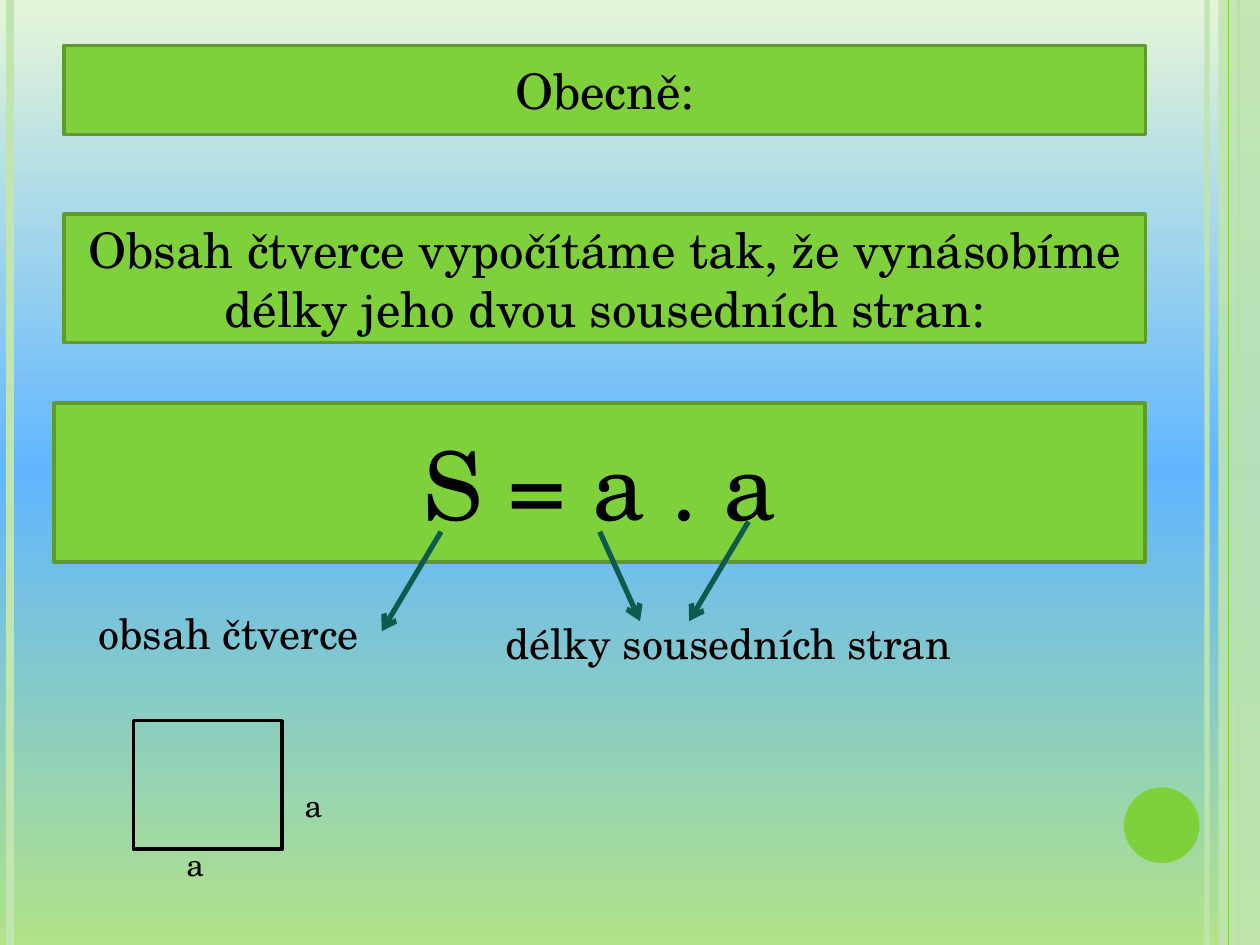
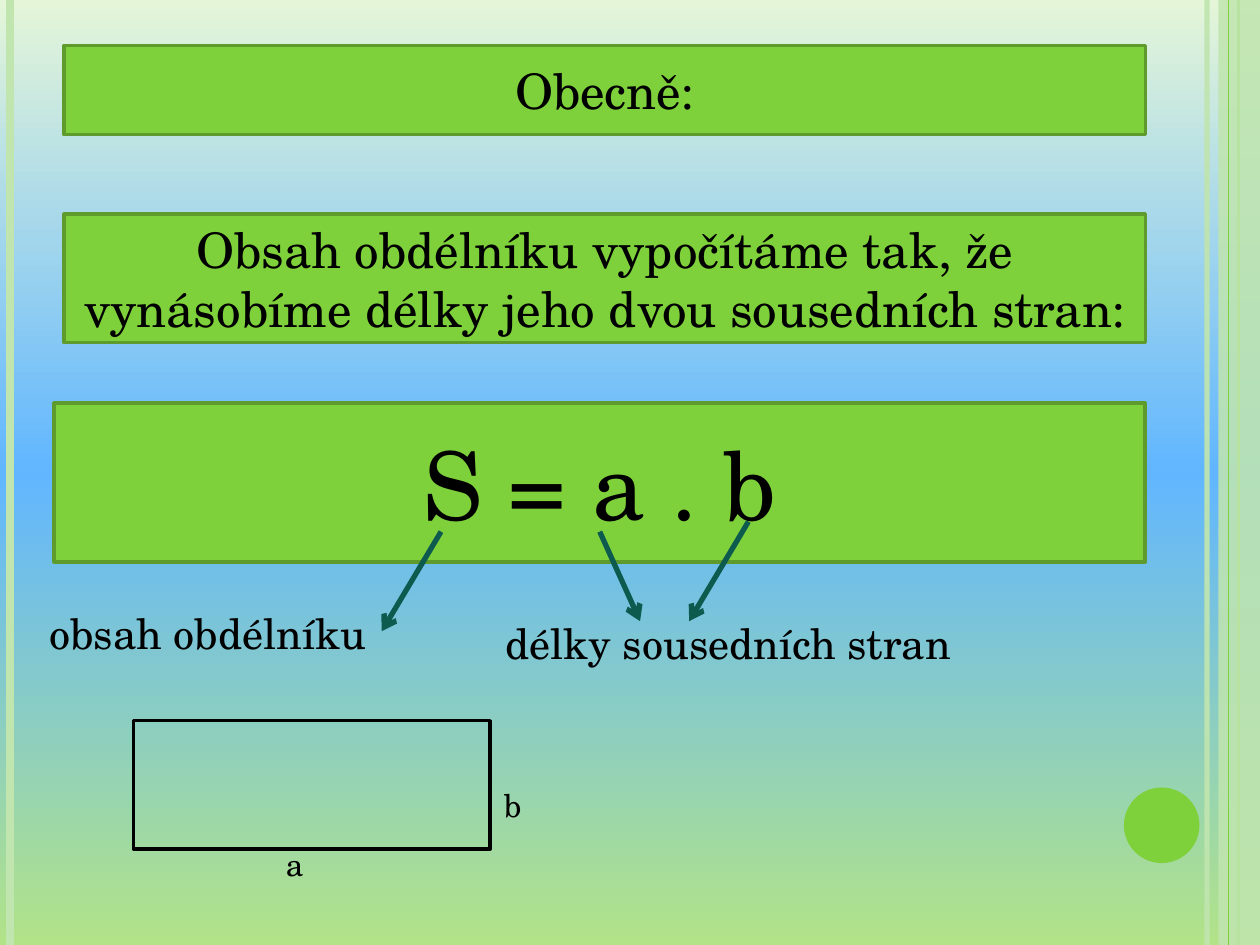
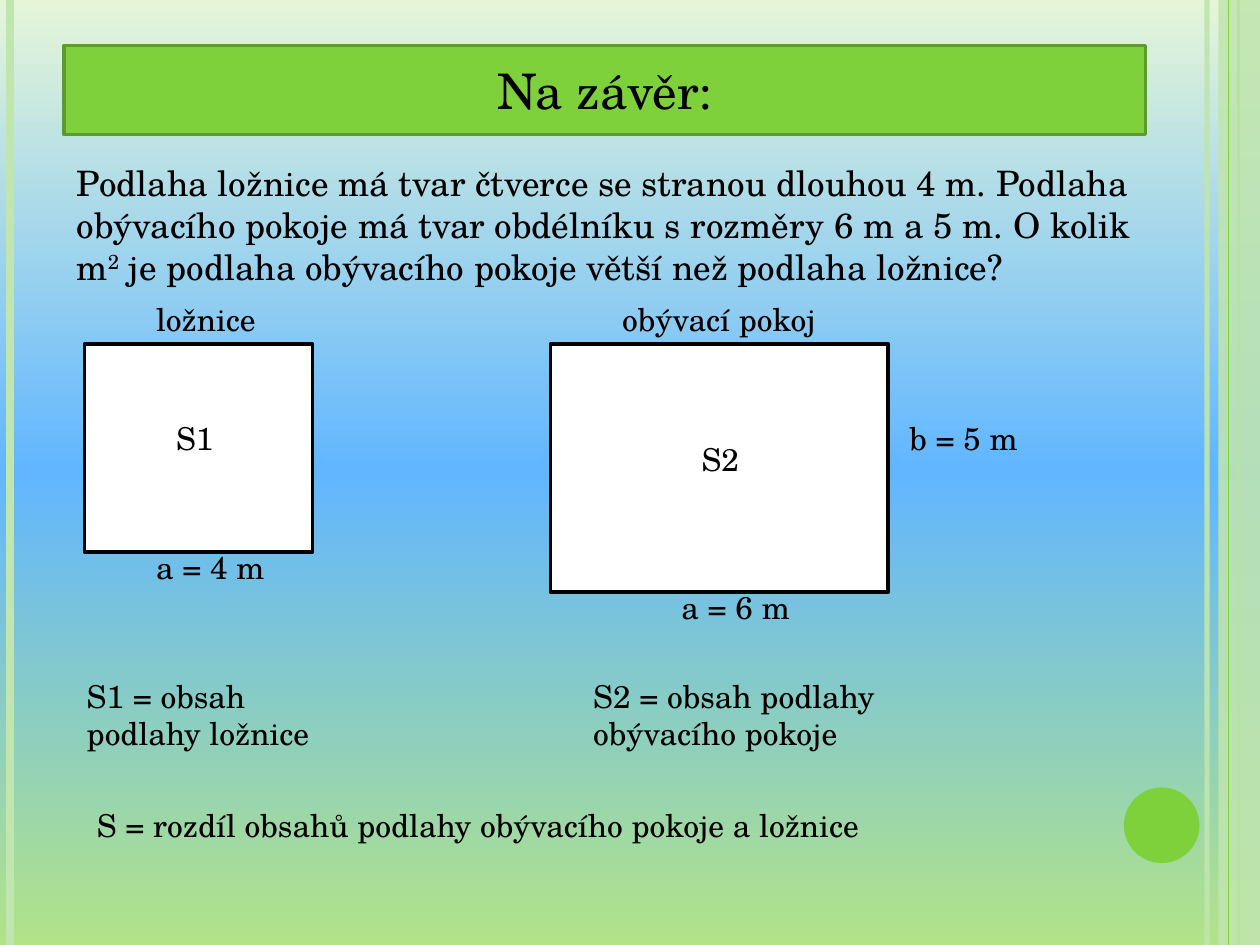
from lxml import etree
from pptx import Presentation
from pptx import util as u
from pptx.dml import color
from pptx.enum import shapes, text
from pptx.oxml import ns

FONT = "TeX Gyre Schola"
GREEN, EDGE, PALE = "7FD13B", "5E9B2C", "C0E5AF"
TEAL, BLACK, WHITE = "0D5A4F", "000000", "FFFFFF"
SKY = [(0, "E5F6D8"), (50, "61B6FF"), (100, "B2E389")]
COLS, ROWS = 100, 75
WIDE, HIGH = u.Inches(10), u.Inches(7.5)
HEAD = (5.1, 3.6, 85.8, 7.1)
RULE = (5.1, 17, 85.8, 10.2)
AREA = (4.3, 32, 86.6, 12.6)


def hue(code):
    """Turn a hex string into a colour."""
    return color.RGBColor.from_string(code)


def cells(*nums):
    """Turn column and row counts, taken in turn, into lengths."""
    steps = (WIDE / COLS, HIGH / ROWS)
    return [u.Emu(round(n * steps[i % 2])) for i, n in enumerate(nums)]


def inner(box, dx, dy, w, h):
    """Give a box placed relative to the corner of another."""
    return box[0] + dx, box[1] + dy, w, h


def add(node, tag, **attrs):
    """Append one XML child with its attributes."""
    return etree.SubElement(node, ns.qn(tag), **attrs)


def fade(shape, share):
    """Make the colours of a shape partly clear."""
    for node in shape.element.xpath("./p:spPr//a:srgbClr"):
        add(node, "a:alpha", val=str(share * 1000))


def paint(shape, fill=None, edge=None):
    """Set the fill and the outline of a shape."""
    if fill:
        shape.fill.solid()
        shape.fill.fore_color.rgb = hue(fill)
    else:
        shape.fill.background()
    if edge:
        shape.line.color.rgb = hue(edge)
        shape.line.width = u.Pt(2)
    else:
        shape.line.fill.background()


def draw(slide, kind, box, fill=None, edge=None):
    """Add a flat preset shape."""
    shape = slide.shapes.add_shape(kind, *cells(*box))
    shape.shadow.inherit = False
    paint(shape, fill, edge)
    return shape


def line(slide, start, end, code, width):
    """Add a plain straight line."""
    link = slide.shapes.add_connector(shapes.MSO_CONNECTOR.STRAIGHT, *cells(*start, *end))
    link.line.color.rgb = hue(code)
    link.line.width = u.Pt(width)
    add(link.element.spPr, "a:effectLst")
    return link


def arrow(slide, start, end):
    """Add a line with an open arrowhead."""
    link = line(slide, start, end, TEAL, 3)
    add(link.element.xpath(".//a:ln")[0], "a:tailEnd", type="arrow")


def write(shape, size, *parts, align=None):
    """Fill the first paragraph of a shape run by run."""
    shape.text_frame.word_wrap = True
    para = shape.text_frame.paragraphs[0]
    para.alignment = align
    for part in parts:
        run = para.add_run()
        run.text = part
        run.font.name, run.font.size = FONT, u.Pt(size)
        run.font.color.rgb = hue(BLACK)


def label(slide, box, size, *parts):
    """Add a text box that grows with its text."""
    shape = slide.shapes.add_textbox(*cells(*box))
    shape.text_frame.auto_size = text.MSO_AUTO_SIZE.SHAPE_TO_FIT_TEXT
    write(shape, size, *parts)
    return shape


def panel(slide, box, size, words):
    """Add a green panel with centred text."""
    shape = draw(slide, shapes.MSO_SHAPE.RECTANGLE, box, GREEN, EDGE)
    shape.text_frame.vertical_anchor = text.MSO_ANCHOR.MIDDLE
    write(shape, size, words, align=text.PP_ALIGN.CENTER)


def begin(deck, words):
    """Add a slide whose title is a green band."""
    slide = deck.slides.add_slide(deck.slide_layouts[5])
    title = slide.shapes.title
    title.left, title.top, title.width, title.height = cells(*HEAD)
    paint(title, GREEN, EDGE)
    title.text_frame.vertical_anchor = text.MSO_ANCHOR.MIDDLE
    write(title, 28, words, align=text.PP_ALIGN.CENTER)
    return slide


def sky(master):
    """Give the master its gradient background."""
    fill = master.background.fill
    fill.gradient()
    fill.gradient_angle = 270
    stops = master.element.xpath(".//p:bg//a:gsLst")[0]
    for stop in list(stops):
        stops.remove(stop)
    for place, code in SKY:
        stop = add(stops, "a:gs", pos=str(place * 1000))
        add(stop, "a:srgbClr", val=code)


def trim(slide, master):
    """Draw the side bands and the dot, and hand them to the master."""
    def bar(x, code, width):
        return line(slide, (x, 0), (x, ROWS), code, width)

    soft = bar(95.8, PALE, 3)
    fade(soft, 93)
    parts = [soft, bar(0.8, PALE, 4.5), bar(98.3, GREEN, 1.5)]
    band = draw(slide, shapes.MSO_SHAPE.RECTANGLE, (96.7, 0, 3.3, ROWS), PALE)
    fade(band, 87)
    dot = draw(slide, shapes.MSO_SHAPE.OVAL, (89.2, 62.5, 6, 6), GREEN)
    parts += [band, bar(97.5, GREEN, 0.75), dot]
    for num, part in enumerate(parts, 20):
        part.element.xpath(".//p:cNvPr")[0].set("id", str(num))
        master.shapes.element.append(part.element)


def figure(slide, box, notes, fill=None):
    """Draw a rectangle with notes placed from its corner."""
    draw(slide, shapes.MSO_SHAPE.RECTANGLE, box, fill, BLACK)
    for words, dx, dy, w in notes:
        label(slide, inner(box, dx, dy, w, 4), 18, words)


def area(slide, box, sides, name, dx):
    """Show the formula and explain its letters with arrows."""
    panel(slide, box, 54, "S = " + " . ".join(sides))
    label(slide, inner(box, dx, 15.7, 26 - dx, 5), 24, " obsah " + name)
    label(slide, inner(box, 33.9, 16.5, 53.5, 5), 24, " délky sousedních stran")
    x, y = box[:2]
    for x1, y1, x2, y2 in [(30.7, 10.2, 26, 18.1), (43.3, 10.2, 46.5, 17.3),
                           (55.1, 9.4, 50.4, 17.3)]:
        arrow(slide, (x + x1, y + y1), (x + x2, y + y2))


def general(deck, name, sides, dx, wide, low, gap):
    """Build a slide that states the area rule of one outline."""
    slide = begin(deck, "Obecně:")
    panel(slide, RULE, 28, f"Obsah {name} vypočítáme tak, že vynásobíme "
                           "délky jeho dvou sousedních stran:")
    area(slide, AREA, sides, name, dx)
    notes = [(sides[1], wide + gap, 4.7, 3.9), (sides[0], low, 9.4, 3.9)]
    figure(slide, (10.6, 57.2, wide, 10.2), notes)
    return slide


def task(deck):
    """Build the closing slide with the floor exercise."""
    slide = begin(deck, "Na závěr:")
    story = label(slide, (5.1, 12.3, 85.8, 11.1), 20,
                  "Podlaha ložnice má tvar čtverce se stranou dlouhou 4 m. "
                  "Podlaha obývacího pokoje má tvar obdélníku s rozměry "
                  "6 m a 5 m. O kolik m", "2",
                  " je podlaha obývacího pokoje větší než podlaha ložnice?")
    story.element.xpath(".//a:rPr")[1].set("baseline", "30000")
    figure(slide, (6.7, 27.3, 18.1, 16.5),
           [("ložnice", 4.7, -4, 11.8), ("S1", 6.3, 5.5, 6.3),
            ("a = 4 m", 4.7, 15.7, 11.8)], WHITE)
    figure(slide, (43.7, 27.3, 26.8, 19.7),
           [("obývací pokoj", 4.7, -4, 22), ("S2", 11, 7.1, 6.3),
            ("a = 6 m", 9.4, 18.9, 11.8), (" b = 5 m", 26.8, 5.5, 13.4)], WHITE)
    label(slide, (5.9, 53.2, 22, 7.1), 18, "S1 = obsah podlahy ložnice")
    label(slide, (46.1, 53.2, 30.7, 7.1), 18, "S2 = obsah podlahy obývacího pokoje")
    label(slide, (6.7, 63.5, 63, 4), 18,
          "S = rozdíl obsahů podlahy obývacího pokoje a ložnice")


def main():
    """Build and save the deck."""
    deck = Presentation()
    deck.slide_width, deck.slide_height = WIDE, HIGH
    sky(deck.slide_master)
    first = general(deck, "čtverce", "aa", 1.6, 11.8, 3.2, 0.8)
    trim(first, deck.slide_master)
    general(deck, "obdélníku", "ab", -2.3, 28.3, 11.1, 0.1)
    task(deck)
    deck.save("out.pptx")


if __name__ == "__main__":
    main()
